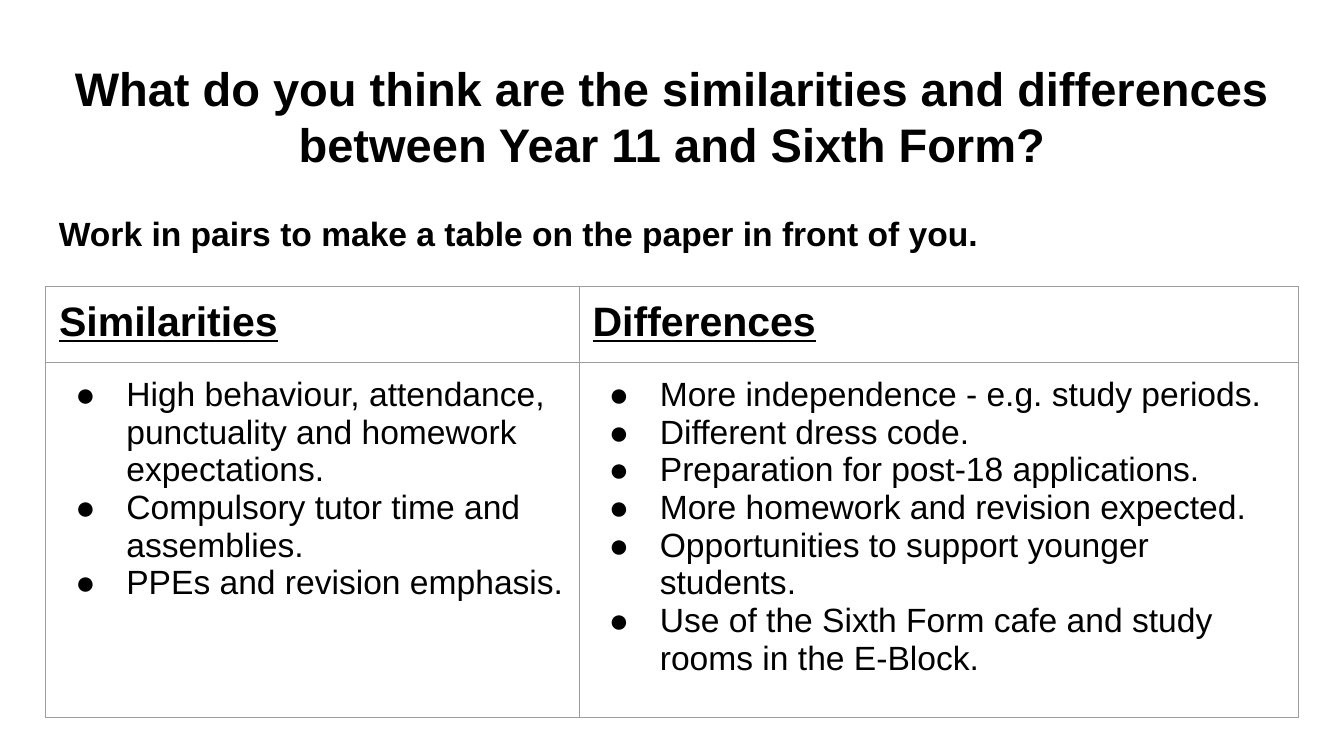
from lxml.etree import SubElement
from pptx import Presentation
from pptx.dml.color import RGBColor
from pptx.enum.text import MSO_ANCHOR, PP_ALIGN
from pptx.oxml.ns import qn
from pptx.util import Inches, Pt

BLACK = RGBColor(0x00, 0x00, 0x00)
BORDER_GRAY = RGBColor(0x9E, 0x9E, 0x9E)
FONT = "Arial"
LEFT, WIDTH = 0.34, 9.32
COLUMN_WIDTHS = [3.97, 5.35]
ROW_HEIGHTS = [0.57, 2.64]

comparison = {
    "Similarities": [
        "High behaviour, attendance, punctuality and homework expectations.",
        "Compulsory tutor time and assemblies.",
        "PPEs and revision emphasis.",
    ],
    "Differences": [
        "More independence - e.g. study periods.",
        "Different dress code.",
        "Preparation for post-18 applications.",
        "More homework and revision expected.",
        "Opportunities to support younger students.",
        "Use of the Sixth Form cafe and study rooms in the E-Block.",
    ],
}


def format_runs(paragraph, size, bold=False, underline=False):
    for run in paragraph.runs:
        run.font.name = FONT
        run.font.size = Pt(size)
        run.font.bold = bold
        run.font.underline = underline
        run.font.color.rgb = BLACK


def add_heading(slide, top, text, size):
    frame = slide.shapes.add_textbox(
        Inches(LEFT), Inches(top), Inches(WIDTH), Inches(0.63)
    ).text_frame
    frame.word_wrap = True
    frame.margin_left = frame.margin_right = Inches(0.1)
    frame.margin_top = frame.margin_bottom = Inches(0.1)
    frame.text = text
    paragraph = frame.paragraphs[0]
    format_runs(paragraph, size, bold=True)
    return paragraph


prs = Presentation()
prs.slide_width = Inches(10)
prs.slide_height = Inches(10 * 9 / 16)
slide = prs.slides.add_slide(prs.slide_layouts[6])

question = add_heading(
    slide,
    0.34,
    "What do you think are the similarities and differences between Year 11 and Sixth Form?",
    25.2,
)
question.alignment = PP_ALIGN.CENTER

task = add_heading(
    slide, 1.44, "Work in pairs to make a table on the paper in front of you.", 18
)
task.line_spacing = 1.15
task.space_after = Pt(12)

table = slide.shapes.add_table(
    2, 2, Inches(LEFT), Inches(2.13), Inches(WIDTH), Inches(sum(ROW_HEIGHTS))
).table
table.first_row = False
table.horz_banding = False
for column, width in zip(table.columns, COLUMN_WIDTHS):
    column.width = Inches(width)
for row, height in zip(table.rows, ROW_HEIGHTS):
    row.height = Inches(height)

for column_index, (heading, points) in enumerate(comparison.items()):
    heading_cell = table.cell(0, column_index)
    heading_cell.text_frame.text = heading
    format_runs(heading_cell.text_frame.paragraphs[0], 22, bold=True, underline=True)

    points_cell = table.cell(1, column_index)
    points_cell.text_frame.text = "\n".join(points)
    for paragraph in points_cell.text_frame.paragraphs:
        format_runs(paragraph, 18)
        properties = paragraph._p.get_or_add_pPr()
        properties.set("marL", str(Inches(0.5)))
        properties.set("indent", str(Inches(-0.38)))
        bullet_color = SubElement(properties, qn("a:buClr"))
        SubElement(bullet_color, qn("a:srgbClr"), val=str(BLACK))
        SubElement(properties, qn("a:buFont"), typeface=FONT)
        SubElement(properties, qn("a:buChar"), char="●")

for cell in table.iter_cells():
    cell.margin_left = cell.margin_right = Inches(0.1)
    cell.margin_top = cell.margin_bottom = Inches(0.1)
    cell.vertical_anchor = MSO_ANCHOR.TOP
    cell_properties = cell._tc.get_or_add_tcPr()
    for side in ("a:lnL", "a:lnR", "a:lnT", "a:lnB"):
        border = SubElement(cell_properties, qn(side), w=str(Pt(0.75)))
        border_fill = SubElement(border, qn("a:solidFill"))
        SubElement(border_fill, qn("a:srgbClr"), val=str(BORDER_GRAY))
    cell.fill.background()

prs.save("out.pptx")
